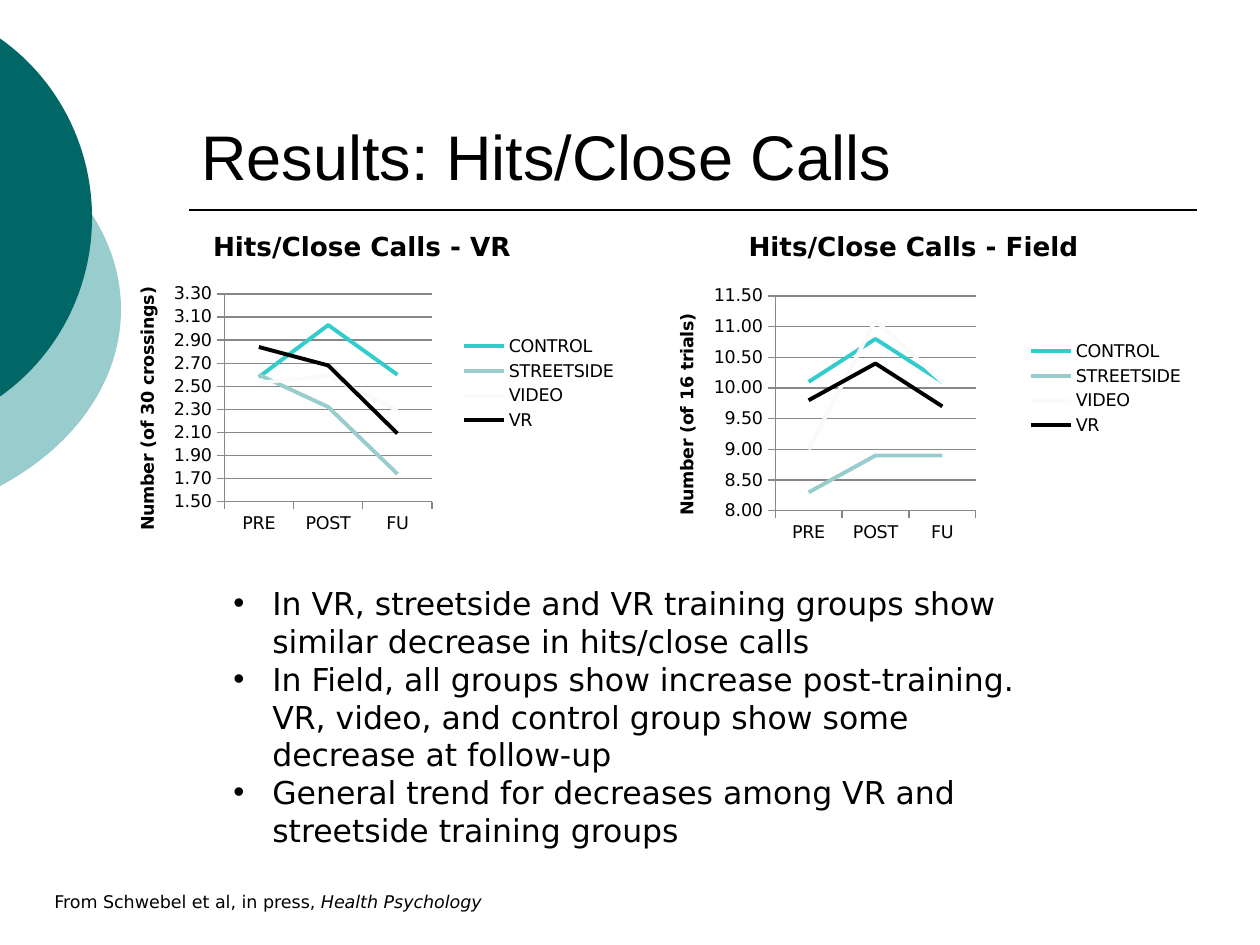
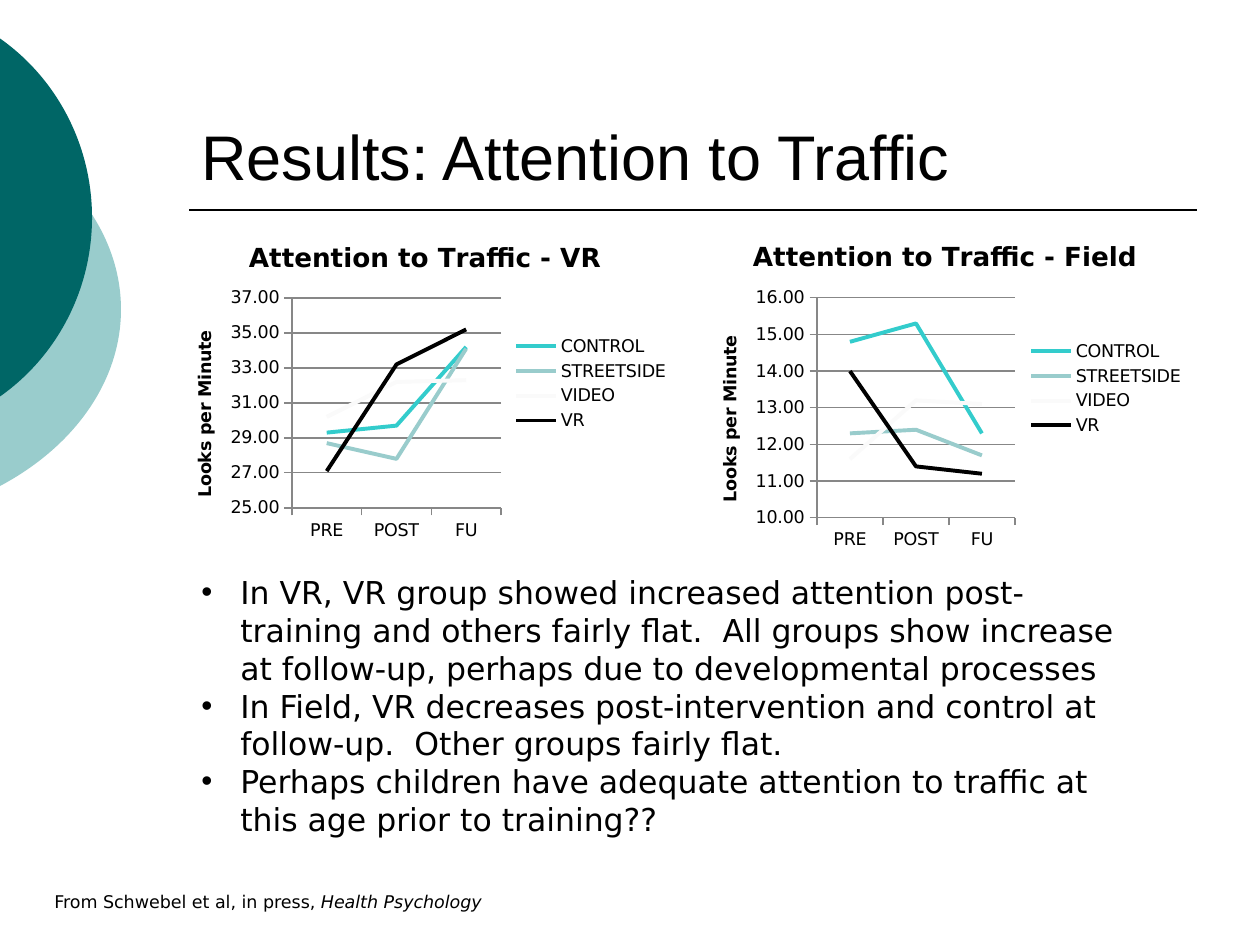
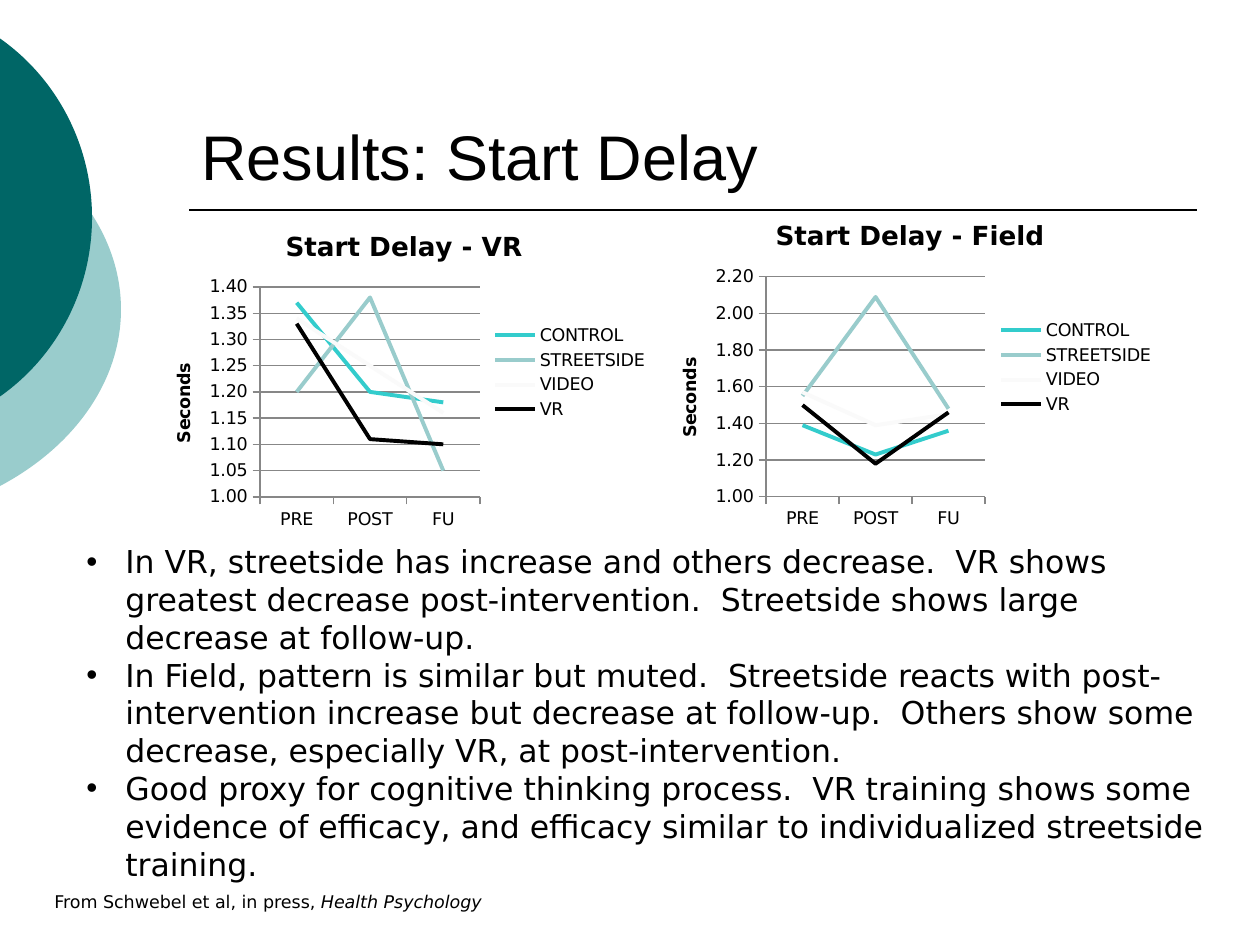
"""Build three result slides, each with two line charts and bulleted findings."""
from lxml import etree
from pptx import Presentation
from pptx.chart.data import CategoryChartData
from pptx.dml.color import RGBColor
from pptx.enum.chart import XL_CHART_TYPE, XL_LEGEND_POSITION, XL_TICK_MARK
from pptx.enum.shapes import MSO_CONNECTOR, MSO_SHAPE
from pptx.enum.text import MSO_ANCHOR, MSO_AUTO_SIZE
from pptx.oxml import parse_xml
from pptx.oxml.ns import nsdecls, qn
from pptx.util import Emu, Pt

LINE_CHART = XL_CHART_TYPE.LINE
LEGEND_RIGHT = XL_LEGEND_POSITION.RIGHT
TICK_OUT = XL_TICK_MARK.OUTSIDE
STRAIGHT = MSO_CONNECTOR.STRAIGHT
OVAL = MSO_SHAPE.OVAL
BOTTOM = MSO_ANCHOR.BOTTOM
GROW = MSO_AUTO_SIZE.SHAPE_TO_FIT_TEXT

BLACK = RGBColor(0x00, 0x00, 0x00)
OFF_WHITE = RGBColor(0xFA, 0xFA, 0xFA)
TEAL = RGBColor(0x00, 0x66, 0x66)
AQUA = RGBColor(0x33, 0xCC, 0xCC)
PALE_TEAL = RGBColor(0x99, 0xCC, 0xCC)
GRID_GRAY = RGBColor(0x87, 0x87, 0x87)

TITLE_FONT = "Arial"
BODY_FONT = "DejaVu Sans"
BULLET_FONT = "Arial"
SCALE = 914400 / 126
BULLET_INDENT = 39

PHASES = ("PRE", "POST", "FU")
GROUPS = (("CONTROL", AQUA), ("STREETSIDE", PALE_TEAL), ("VIDEO", OFF_WHITE), ("VR", BLACK))
CITATION = (("From Schwebel et al, in press, ", False), ("Health Psychology", True))

DISCS = (((-446, 94, 567, 431), PALE_TEAL), ((-334, 0, 426, 435), TEAL))
TITLE_AREA = (189, 42, 1008, 157)
RULE = (189, 210, 1197, 210)
CITATION_AREA = (42, 885, 630, 34)

SLIDES = (
    {
        "title": "Results: Hits/Close Calls",
        "findings_area": (221, 578, 829, 280),
        "findings": (
            "In VR, streetside and VR training groups show similar decrease in hits/close calls",
            "In Field, all groups show increase post-training. VR, video, and control group "
            "show some decrease at follow-up",
            "General trend for decreases among VR and streetside training groups",
        ),
        "charts": (
            {"title": "Hits/Close Calls - Field", "unit": "Number (of 16 trials)",
             "area": (630, 210, 567, 357), "plot": (775, 296, 201, 215), "scale": (8, 11.5, 0.5),
             "values": ((10.1, 10.8, 10.1), (8.3, 8.9, 8.9), (9, 11.1, 10.1), (9.8, 10.4, 9.7))},
            {"title": "Hits/Close Calls - VR", "unit": "Number (of 30 crossings)",
             "area": (94, 210, 536, 347), "plot": (224, 294, 208, 208), "scale": (1.5, 3.3, 0.2),
             "values": ((2.58, 3.03, 2.6), (2.6, 2.32, 1.74), (2.53, 2.59, 2.29),
                        (2.84, 2.68, 2.09))},
        ),
    },
    {
        "title": "Results: Attention to Traffic",
        "findings_area": (189, 567, 945, 318),
        "findings": (
            "In VR, VR group showed increased attention post-training and others fairly flat.  "
            "All groups show increase at follow-up, perhaps due to developmental processes",
            "In Field, VR decreases post-intervention and control at follow-up.  "
            "Other groups fairly flat.",
            "Perhaps children have adequate attention to traffic at this age prior to training??",
        ),
        "charts": (
            {"title": "Attention to Traffic - Field", "unit": "Looks per Minute",
             "area": (693, 220, 504, 337), "plot": (817, 298, 198, 220), "scale": (10, 16, 1),
             "values": ((14.8, 15.3, 12.3), (12.3, 12.4, 11.7), (11.6, 13.2, 13.1),
                        (14, 11.4, 11.2))},
            {"title": "Attention to Traffic - VR", "unit": "Looks per Minute",
             "area": (168, 221, 514, 325), "plot": (292, 298, 209, 210), "scale": (25, 37, 2),
             "values": ((29.3, 29.7, 34.2), (28.7, 27.8, 34.1), (30.2, 32.2, 32.3),
                        (27.1, 33.2, 35.2))},
        ),
    },
    {
        "title": "Results: Start Delay",
        "findings_area": (74, 536, 1155, 357),
        "findings": (
            "In VR, streetside has increase and others decrease.  VR shows greatest decrease "
            "post-intervention.  Streetside shows large decrease at follow-up.",
            "In Field, pattern is similar but muted.  Streetside reacts with post-intervention "
            "increase but decrease at follow-up.  Others show some decrease, especially VR, "
            "at post-intervention.",
            "Good proxy for cognitive thinking process.  VR training shows some evidence of "
            "efficacy, and efficacy similar to individualized streetside training.",
        ),
        "charts": (
            {"title": "Start Delay - Field", "unit": "Seconds",
             "area": (653, 199, 514, 337), "plot": (766, 277, 219, 220), "scale": (1, 2.2, 0.2),
             "values": ((1.39, 1.23, 1.36), (1.55, 2.09, 1.48), (1.57, 1.39, 1.45),
                        (1.5, 1.18, 1.46))},
            {"title": "Start Delay - VR", "unit": "Seconds",
             "area": (147, 210, 514, 325), "plot": (260, 287, 220, 210), "scale": (1, 1.4, 0.05),
             "values": ((1.37, 1.2, 1.18), (1.2, 1.38, 1.05), (1.34, 1.25, 1.16),
                        (1.33, 1.11, 1.1))},
        ),
    },
)


def px(*lengths):
    return [Emu(round(length * SCALE)) for length in lengths]


def style_font(font, name, size, bold=False):
    font.name, font.size, font.bold = name, Pt(size), bold
    font.color.rgb = BLACK


def add_disc(page, area, color):
    disc = page.shapes.add_shape(OVAL, *px(*area))
    disc.shadow.inherit = False
    disc.fill.solid()
    disc.fill.fore_color.rgb = color
    disc.line.fill.background()


def add_frame(page, area):
    frame = page.shapes.add_textbox(*px(*area)).text_frame
    frame.word_wrap = True
    return frame


def add_shared_parts(page, title):
    for area, color in DISCS:
        add_disc(page, area, color)
    rule = page.shapes.add_connector(STRAIGHT, *px(*RULE))
    rule.line.color.rgb = BLACK
    rule.line.width = Pt(1)
    etree.SubElement(rule._element.spPr, qn("a:effectLst"))

    frame = add_frame(page, TITLE_AREA)
    frame.vertical_anchor = BOTTOM
    frame.text = title
    style_font(frame.paragraphs[0].font, TITLE_FONT, 36)

    frame = add_frame(page, CITATION_AREA)
    frame.auto_size = GROW
    para = frame.paragraphs[0]
    style_font(para.font, BODY_FONT, 10)
    for text, italic in CITATION:
        span = para.add_run()
        span.text = text
        style_font(span.font, BODY_FONT, 10)
        span.font.italic = italic


def add_findings(page, area, findings):
    frame = add_frame(page, area)
    frame.auto_size = GROW
    frame.text = "\n".join(findings)
    indent = px(BULLET_INDENT)[0]
    for para in frame.paragraphs:
        style_font(para.font, BODY_FONT, 18)
        properties = para._p.get_or_add_pPr()
        properties.set("marL", str(indent))
        properties.set("indent", str(-indent))
        for markup in (f'<a:buFont {nsdecls("a")} typeface="{BULLET_FONT}"/>',
                       f'<a:buChar {nsdecls("a")} char="•"/>'):
            properties.insert_element_before(parse_xml(markup), "a:tabLst", "a:defRPr", "a:extLst")


def place_plot(chart, area, plot):
    left, top, width, height = area
    fractions = {"x": (plot[0] - left) / width, "y": (plot[1] - top) / height,
                 "w": plot[2] / width, "h": plot[3] / height}
    modes = '<c:layoutTarget val="inner"/><c:xMode val="edge"/><c:yMode val="edge"/>'
    sizes = "".join(f'<c:{key} val="{value:.3f}"/>' for key, value in fractions.items())
    layout = parse_xml(f'<c:layout {nsdecls("c")}><c:manualLayout>{modes}{sizes}'
                       '</c:manualLayout></c:layout>')
    plot_area = chart._chartSpace.chart.plotArea
    for previous in plot_area.findall(qn("c:layout")):
        plot_area.remove(previous)
    plot_area.insert(0, layout)


def style_gray(line):
    line.color.rgb = GRID_GRAY
    line.width = Pt(0.75)


def add_line_chart(page, content):
    data = CategoryChartData(number_format="0.00")
    data.categories = PHASES
    for (name, _), values in zip(GROUPS, content["values"]):
        data.add_series(name, values)
    chart = page.shapes.add_chart(LINE_CHART, *px(*content["area"]), data).chart
    style_font(chart.font, BODY_FONT, 10)

    chart.has_title = True
    heading = chart.chart_title.text_frame
    heading.text = content["title"]
    style_font(heading.paragraphs[0].font, BODY_FONT, 15, bold=True)
    chart.chart_title.include_in_layout = False

    chart.has_legend = True
    chart.legend.position = LEGEND_RIGHT
    chart.legend.include_in_layout = False

    for axis in (chart.category_axis, chart.value_axis):
        axis.major_tick_mark = TICK_OUT
        style_gray(axis.format.line)
    axis = chart.value_axis
    axis.minimum_scale, axis.maximum_scale, axis.major_unit = content["scale"]
    axis.tick_labels.number_format = "0.00"
    axis.tick_labels.number_format_is_linked = False
    style_gray(axis.major_gridlines.format.line)
    unit = axis.axis_title.text_frame
    unit.text = content["unit"]
    style_font(unit.paragraphs[0].font, BODY_FONT, 10, bold=True)
    unit._txBody.bodyPr.set("rot", "-5400000")
    unit._txBody.bodyPr.set("vert", "horz")

    chart.plots[0].vary_by_categories = False
    for series, (_, color) in zip(chart.plots[0].series, GROUPS):
        series.smooth = False
        series.format.line.color.rgb = color
        series.format.line.width = Pt(2.25)
    place_plot(chart, content["area"], content["plot"])


def main():
    deck = Presentation()
    deck.slide_width, deck.slide_height = px(1260, 945)
    for content in SLIDES:
        page = deck.slides.add_slide(deck.slide_layouts[6])
        add_shared_parts(page, content["title"])
        for chart_content in content["charts"]:
            add_line_chart(page, chart_content)
        add_findings(page, content["findings_area"], content["findings"])
    deck.save("out.pptx")


if __name__ == "__main__":
    main()
